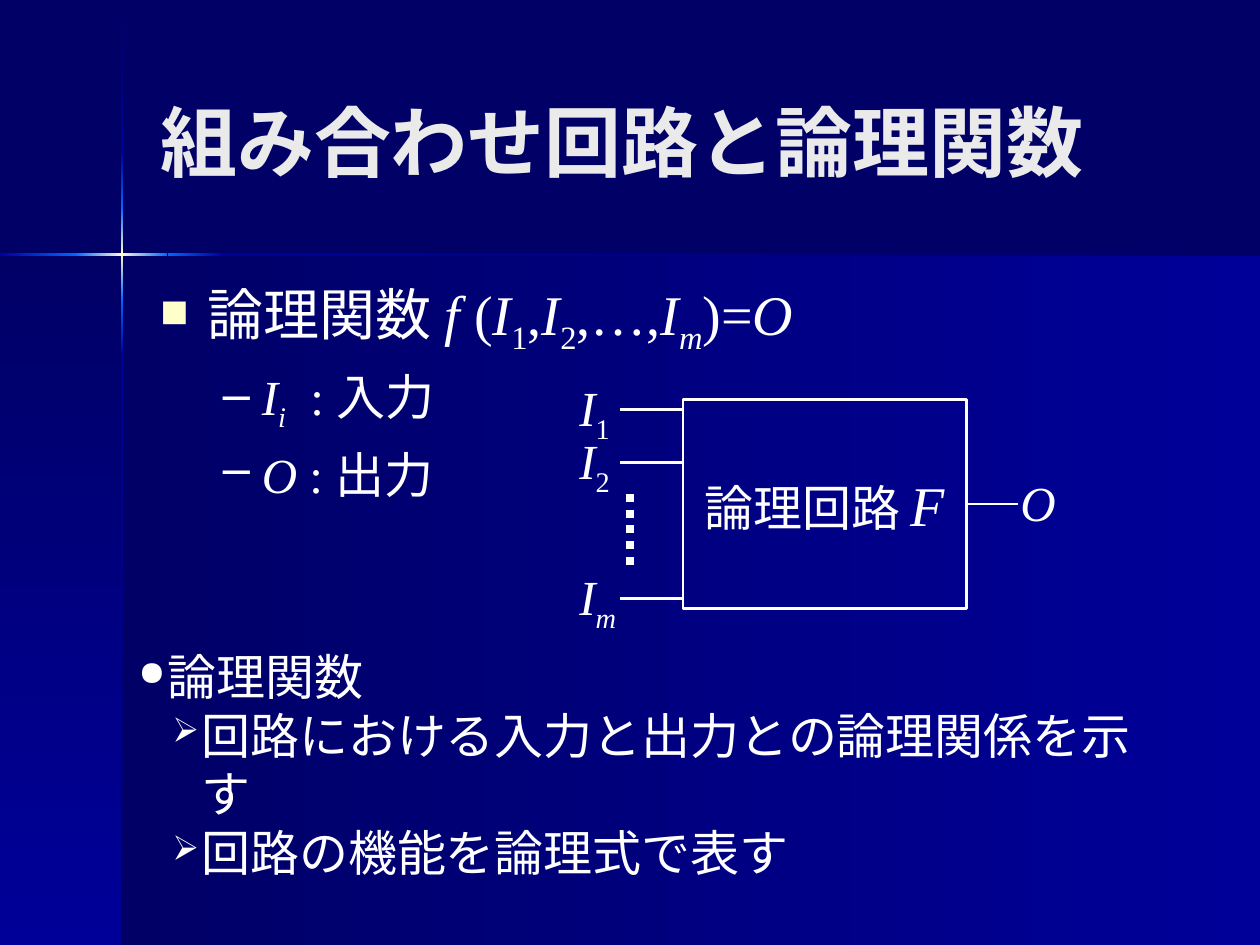
import pptx
import pptx.util
import pptx.dml.color
import pptx.enum.dml
import pptx.enum.lang
import pptx.enum.shapes
import pptx.enum.text
import pptx.oxml
import pptx.oxml.ns
from pptx.util import Inches, Pt

NS = pptx.oxml.ns.nsdecls("a")
WHITE, CREAM, GREY = "FFFFFF", "FFFFCC", "EAEAEA"
NAVY, BLUE, GLOW = "000066", "000099", "0066FF"
ANCHOR = pptx.enum.text.MSO_ANCHOR
ALIGN = pptx.enum.text.PP_ALIGN


def rgb(code):
    return pptx.dml.color.RGBColor.from_string(code)


def node(text):
    return pptx.oxml.parse_xml(text)


class Deck:
    font = "Times New Roman"

    def __init__(self):
        self.prs = pptx.Presentation()
        self.prs.slide_width = Inches(10)
        self.prs.slide_height = Inches(7.5)
        self.slide = self.prs.slides.add_slide(self.prs.slide_layouts[5])
        fill = self.slide.background.fill
        fill.solid()
        fill.fore_color.rgb = rgb(NAVY)

    def box(self, x, y, w, h):
        shape = self.slide.shapes.add_shape(
            pptx.enum.shapes.MSO_SHAPE.RECTANGLE,
            Inches(x), Inches(y), Inches(w), Inches(h))
        shape.shadow.inherit = False
        return shape

    def panel(self, x, y, w, h, tones, angle):
        shape = self.box(x, y, w, h)
        shape.line.fill.background()
        shape.fill.background()
        last = len(tones) - 1
        stops = "".join(
            f'<a:gs pos="{100000 * i // last}"><a:srgbClr val="{tone}"/></a:gs>'
            for i, tone in enumerate(tones))
        props = shape._element.spPr
        old = props.find(pptx.oxml.ns.qn("a:noFill"))
        props.replace(old, node(
            f'<a:gradFill {NS} rotWithShape="1"><a:gsLst>{stops}</a:gsLst>'
            f'<a:lin ang="{angle * 60000}" scaled="0"/></a:gradFill>'))

    def frame(self, x, y, w, h, color):
        shape = self.box(x, y, w, h)
        shape.fill.background()
        shape.line.color.rgb = rgb(color)
        shape.line.width = Pt(1.5)
        return shape

    def line(self, x1, y1, x2, y2, width=1.5, dash=None):
        link = self.slide.shapes.add_connector(
            pptx.enum.shapes.MSO_CONNECTOR.STRAIGHT,
            Inches(x1), Inches(y1), Inches(x2), Inches(y2))
        link.line.color.rgb = rgb(WHITE)
        link.line.width = Pt(width)
        if dash:
            link.line.dash_style = dash
        link._element.spPr.append(node(f"<a:effectLst {NS}/>"))
        return link

    def runs(self, para, parts, size, color=WHITE, bold=False):
        for text, style, *own in parts:
            run = para.add_run()
            run.text = text
            font = run.font
            font.name = self.font
            font.size = Pt(own[0] if own else size)
            font.bold = bold
            font.italic = "i" in style
            font.color.rgb = rgb(color)
            font.language_id = pptx.enum.lang.MSO_LANGUAGE_ID.JAPANESE
            if "s" in style:
                font._element.set("baseline", "-25000")

    def bullet(self, para, mark, left, hang, color=WHITE, scale=100):
        props = para._p.get_or_add_pPr()
        props.set("marL", str(Inches(left)))
        props.set("indent", str(Inches(-hang)))
        for text in (f'<a:buClr {NS}><a:srgbClr val="{color}"/></a:buClr>',
                     f'<a:buSzPct {NS} val="{scale * 1000}"/>',
                     f'<a:buChar {NS} char="{mark}"/>'):
            props.append(node(text))

    def title(self, text):
        shape = self.slide.shapes.title
        shape.left, shape.top = Inches(1.17), Inches(0.33)
        shape.width, shape.height = Inches(8.25), Inches(1.57)
        frame = shape.text_frame
        frame.auto_size = pptx.enum.text.MSO_AUTO_SIZE.NONE
        frame.vertical_anchor = ANCHOR.MIDDLE
        para = frame.paragraphs[0]
        para.alignment = ALIGN.LEFT
        self.runs(para, [(text, "")], 44, GREY, True)

    def text(self, x, y, w, h, wrap=True):
        frame = self.slide.shapes.add_textbox(
            Inches(x), Inches(y), Inches(w), Inches(h)).text_frame
        frame.word_wrap = wrap
        return frame

    def label(self, x, y, w, parts):
        frame = self.text(x, y, w, 0.57, False)
        self.runs(frame.paragraphs[0], parts, 28)

    def items(self, frame, rows, gap=0):
        for i, (parts, size, level, mark) in enumerate(rows):
            para = frame.add_paragraph() if i else frame.paragraphs[0]
            para.level = level
            self.bullet(para, *mark)
            if i and gap:
                para.space_before = Pt(gap)
            self.runs(para, parts, size)


def backdrop(deck):
    deck.panel(0.97, 2.02, 9.03, 5.48, (NAVY, BLUE), 0)
    deck.panel(0, 2.02, 0.97, 5.48, (NAVY, BLUE), 90)
    star = (GLOW, CREAM, GLOW)
    for top, tall, tones in ((0.01, 1.2, (NAVY, BLUE)),
                             (2.82, 4.68, (BLUE, NAVY)),
                             (2.38, 0.44, (GLOW, BLUE)),
                             (1.21, 0.44, (BLUE, GLOW)),
                             (1.65, 0.73, star)):
        deck.panel(0.96, top, 0.02, tall, tones, 90)
    for left, wide, tones in ((1.77, 8.23, (BLUE, NAVY)),
                              (0, 0.61, (BLUE, GLOW)),
                              (1.33, 0.44, (GLOW, BLUE)),
                              (0.6, 0.73, star)):
        deck.panel(left, 2.01, wide, 0.02, tones, 0)


def circuit(deck):
    gate = deck.frame(5.42, 3.17, 2.25, 1.66, WHITE)
    frame = gate.text_frame
    frame.word_wrap = False
    frame.vertical_anchor = ANCHOR.MIDDLE
    para = frame.paragraphs[0]
    para.alignment = ALIGN.CENTER
    deck.runs(para, [("論理回路 ", ""), ("F", "i", 32)], 28)
    for y, sub, style, wide in ((3.25, "1", "s", 0.46),
                                (3.67, "2", "s", 0.46),
                                (4.75, "m", "is", 0.52)):
        deck.line(4.92, y, 5.42, y)
        deck.label(4.5, y - 0.3, wide, [("I", "i"), (sub, style)])
    deck.line(5, 3.92, 5, 4.5, 4.5,
              pptx.enum.dml.MSO_LINE.ROUND_DOT)
    out = deck.line(7.67, 4, 8.08, 4)
    out.begin_connect(gate, 3)
    deck.label(8, 3.7, 0.48, [("O", "i")])


def main():
    deck = Deck()
    backdrop(deck)
    deck.title("組み合わせ回路と論理関数")
    dash = ("–", 0.81, 0.31)
    formula = [("論理関数 ", ""), ("f", "i"), (" (", ""),
               ("I", "i"), ("1", "s"), (",", ""),
               ("I", "i"), ("2", "s"), (",…,", ""),
               ("I", "i"), ("m", "is"), (")=", ""), ("O", "i")]
    deck.items(deck.text(1.17, 2.17, 8.25, 1.92), [
        (formula, 32, 0, ("■", 0.38, 0.38, CREAM, 70)),
        ([("I", "i"), ("i", "is"), ("  : 入力", "")], 28, 1, dash),
        ([("O", "i"), (" : 出力", "")], 28, 1, dash)], 6)
    circuit(deck)
    arrow = ("➢", 0.5, 0.23, WHITE, 70)
    deck.items(deck.text(1, 5.08, 8.33, 1.5), [
        ([("論理関数", "")], 28, 0, ("●", 0.23, 0.23, WHITE, 70)),
        ([("回路における入力と出力との論理関係を示す", "")], 28, 1, arrow),
        ([("回路の機能を論理式で表す", "")], 28, 1, arrow)])
    deck.prs.save("out.pptx")


if __name__ == "__main__":
    main()
